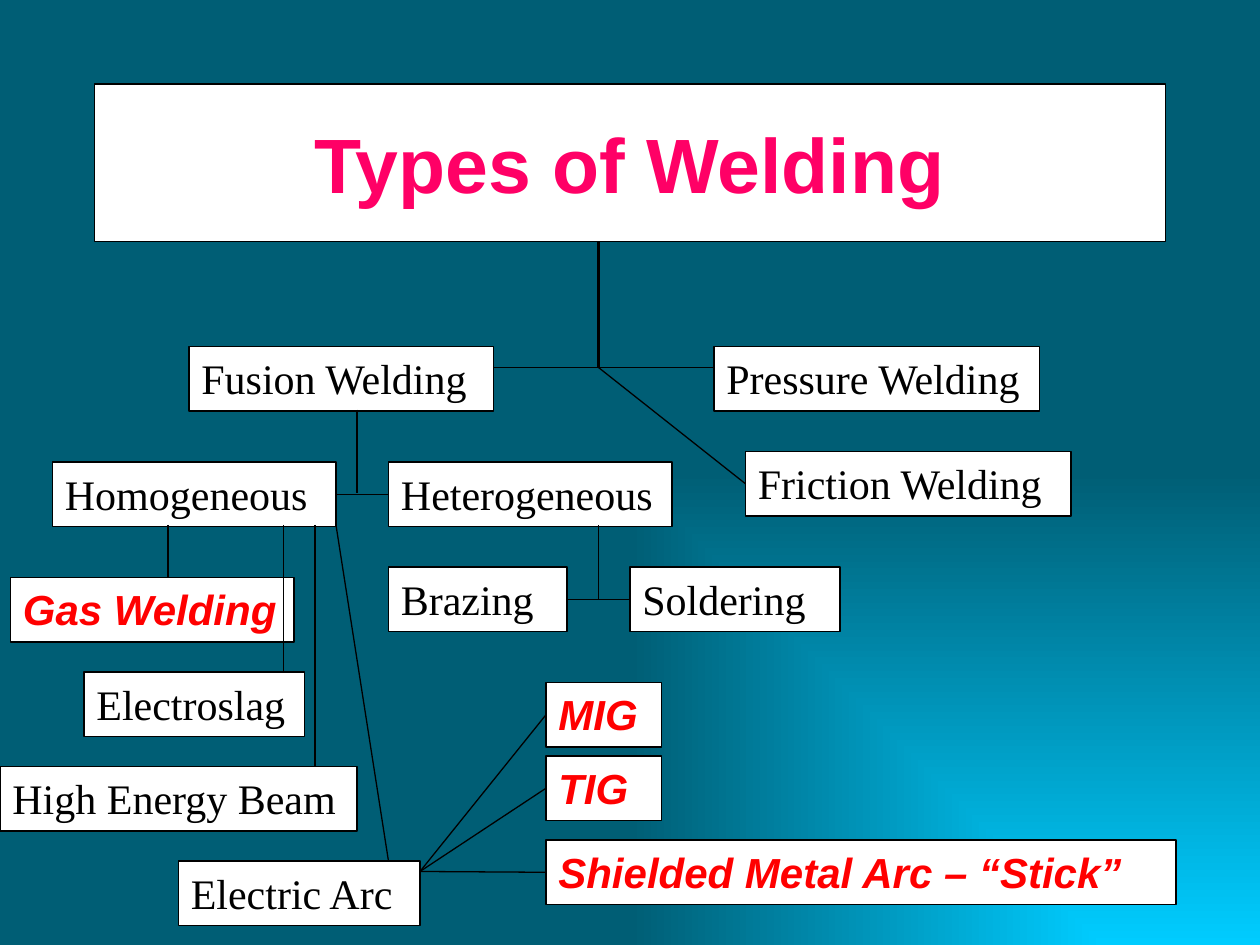
"""Build a tree diagram of welding types on a grid of twelfths of an inch."""
from lxml import etree
from pptx import Presentation
from pptx import util as u
from pptx.dml.color import RGBColor
from pptx.enum import shapes, text
from pptx.oxml.ns import qn

COLORS = {"glow": "00CCFF", "deep": "005E75", "box": "FFFFFF", "ink": "000000",
          "title": "FF0066", "accent": "FF0000"}
COLUMNS, ROWS = 120, 90
BOX_HEIGHT = 6.15
TOP, LEFT, BOTTOM, RIGHT = range(4)

STYLES = {
    "title": dict(font="Arial", size=44, color="title", bold=True, italic=False),
    "plain": dict(font="Times New Roman", size=24, color="ink", bold=False, italic=False),
    "accent": dict(font="Arial", size=24, color="accent", bold=True, italic=True),
}
TITLE = ("Types of Welding", 9, 8, 102, 15)
BOXES = [
    ("Fusion Welding", 18, 33, 29, "plain"),
    ("Pressure Welding", 68, 33, 31, "plain"),
    ("Friction Welding", 71, 43, 31, "plain"),
    ("Homogeneous", 5, 44, 27, "plain"),
    ("Heterogeneous", 37, 44, 27, "plain"),
    ("Brazing", 37, 54, 17, "plain"),
    ("Soldering", 60, 54, 20, "plain"),
    ("Gas Welding", 1, 55, 27, "accent"),
    ("Electroslag", 8, 64, 21, "plain"),
    ("High Energy Beam", 0, 73, 34, "plain"),
    ("Electric Arc", 17, 82, 23, "plain"),
    ("MIG", 52, 65, 11, "accent"),
    ("TIG", 52, 72, 11, "accent"),
    ("Shielded Metal Arc – “Stick”", 52, 80, 60, "accent"),
]
FORK, ARC = (57, 35), (40, 83)
LINES = [
    ((57, 23), FORK, 1.5),
    ((47, 35), (68, 35), 0.75),
    (FORK, ("Friction Welding", LEFT), 0.75),
    ((34, 39), (34, 47), 0.75),
    (("Homogeneous", RIGHT), ("Heterogeneous", LEFT), 0.75),
    ((57, 50), (57, 57), 0.75),
    (("Brazing", RIGHT), ("Soldering", LEFT), 0.75),
    ((16, 50), (16, 55), 0.75),
    ((27, 50), (27, 64), 0.75),
    ((30, 50), (30, 73), 0.75),
    ((32, 50), (37, 82), 0.75),
] + [(ARC, (name, LEFT), 0.75) for name in ("MIG", "TIG", "Shielded Metal Arc – “Stick”")]


def color(name):
    return RGBColor.from_string(COLORS[name])


def grid(units):
    return u.Inches(units / 12)


def paint_background(slide):
    fill = slide.background.fill
    fill.gradient()
    for stop, name in zip(fill.gradient_stops, ("glow", "deep")):
        stop.color.rgb = color(name)
        stop.position = 0 if name == "glow" else 1
    linear = slide.element.find(".//" + qn("a:lin"))
    radial = etree.Element(qn("a:path"), {"path": "rect"})
    etree.SubElement(radial, qn("a:fillToRect"), {"l": "100000", "t": "100000"})
    linear.getparent().replace(linear, radial)


def add_box(slide, label, left, top, width, height, style_name):
    style = STYLES[style_name]
    centred = style_name == "title"
    shape = slide.shapes.add_shape(
        shapes.MSO_SHAPE.RECTANGLE, *map(grid, (left, top, width, height)))
    shape.shadow.inherit = False
    shape.fill.solid()
    shape.fill.fore_color.rgb = color("box")
    shape.line.color.rgb = color("ink")
    shape.line.width = u.Pt(0.75)
    frame = shape.text_frame
    frame.word_wrap = True
    frame.vertical_anchor = text.MSO_ANCHOR.MIDDLE if centred else text.MSO_ANCHOR.TOP
    paragraph = frame.paragraphs[0]
    paragraph.alignment = text.PP_ALIGN.CENTER if centred else text.PP_ALIGN.LEFT
    run = paragraph.add_run()
    run.text = label
    run.font.name = style["font"]
    run.font.size = u.Pt(style["size"])
    run.font.bold, run.font.italic = style["bold"], style["italic"]
    run.font.color.rgb = color(style["color"])
    return shape


def add_line(slide, boxes, start, end, weight):
    points = [(0, 0) if point[0] in boxes else point for point in (start, end)]
    connector = slide.shapes.add_connector(
        shapes.MSO_CONNECTOR.STRAIGHT, *(grid(value) for point in points for value in point))
    for point, join in ((start, connector.begin_connect), (end, connector.end_connect)):
        if point[0] in boxes:
            join(boxes[point[0]], point[1])
    connector.line.color.rgb = color("ink")
    connector.line.width = u.Pt(weight)
    etree.SubElement(connector.element.spPr, qn("a:effectLst"))


def main():
    presentation = Presentation()
    presentation.slide_width, presentation.slide_height = grid(COLUMNS), grid(ROWS)
    slide = presentation.slides.add_slide(presentation.slide_layouts[6])
    paint_background(slide)
    add_box(slide, *TITLE, "title")
    boxes = {label: add_box(slide, label, left, top, width, BOX_HEIGHT, style)
             for label, left, top, width, style in BOXES}
    for start, end, weight in LINES:
        add_line(slide, boxes, start, end, weight)
    presentation.save("out.pptx")


if __name__ == "__main__":
    main()
